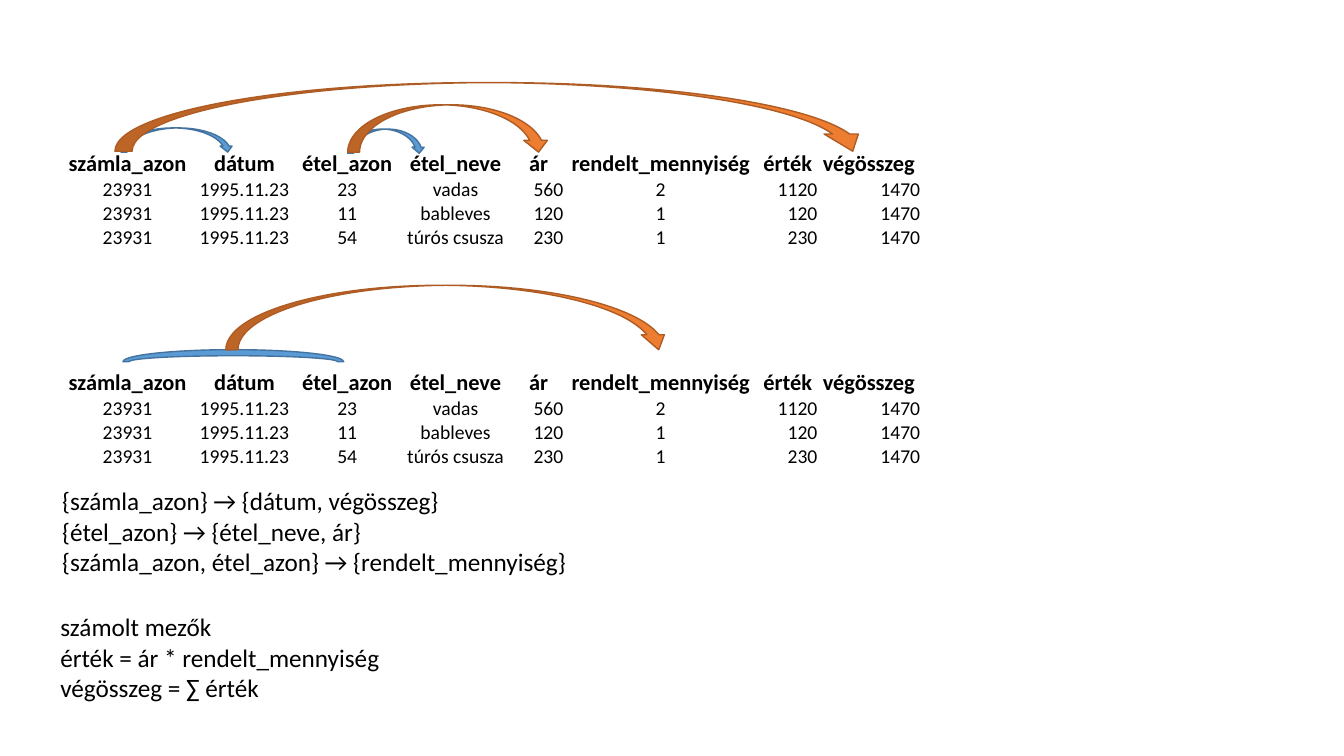
from dataclasses import dataclass

from lxml import etree
from pptx import Presentation
from pptx.dml.color import RGBColor
from pptx.enum.shapes import MSO_SHAPE
from pptx.enum.text import MSO_ANCHOR, MSO_AUTO_SIZE, PP_ALIGN
from pptx.oxml.ns import qn
from pptx.slide import Slide
from pptx.table import _Cell
from pptx.util import Pt

CURVED_ARROW = MSO_SHAPE.CURVED_DOWN_ARROW
BLOCK_ARC = MSO_SHAPE.BLOCK_ARC
BOTTOM = MSO_ANCHOR.BOTTOM
CENTER, RIGHT = PP_ALIGN.CENTER, PP_ALIGN.RIGHT
GROW = MSO_AUTO_SIZE.SHAPE_TO_FIT_TEXT


@dataclass(frozen=True)
class Theme:
    font: str = "Calibri"
    text: str = "000000"
    paper: str = "FFFFFF"
    blue: str = "5B9BD5"
    blue_line: str = "43739E"
    orange: str = "ED7D31"
    orange_line: str = "AF5C24"
    header_size: int = 16
    cell_size: int = 14
    note_size: int = 18


THEME = Theme()


@dataclass(frozen=True)
class Arc:
    left: float
    top: float
    width: float
    height: float
    fill: str
    line: str
    kind: MSO_SHAPE = CURVED_ARROW
    adjustments: tuple[float, ...] = ()


@dataclass(frozen=True)
class Note:
    left: float
    top: float
    width: float
    height: float
    lines: tuple[str, ...]


# Invoice block, shown twice in one table
HEADERS = ("számla_azon", "dátum", "étel_azon", "étel_neve", "ár",
           "rendelt_mennyiség", "érték", "végösszeg")
ITEMS = (
    ("23931", "1995.11.23", "23", "vadas", "560", "2", "1120", "1470"),
    ("23931", "1995.11.23", "11", "bableves", "120", "1", "120", "1470"),
    ("23931", "1995.11.23", "54", "túrós csusza", "230", "1", "230", "1470"),
)
RIGHT_ALIGNED = {"ár", "érték", "végösszeg"}
COLUMN_WIDTHS = (91.4, 75.6, 71.3, 83.5, 35.3, 139, 42.5, 73.4)
TABLE_LEFT, TABLE_TOP = 45.4, 56.2
ROW_COUNT, ROW_HEIGHT = 16, 17.1
HEADER_ROWS = (3, 12)

# Dependency arrows, from back to front
ARCS = (
    Arc(86.4, 91.4, 80.6, 17.3, THEME.blue, THEME.blue_line),
    Arc(82.1, 59, 539.3, 49, THEME.orange, THEME.orange_line),
    Arc(248.4, 92.2, 55.4, 17.3, THEME.blue, THEME.blue_line),
    Arc(248.4, 74.9, 144.7, 33.8, THEME.orange, THEME.orange_line),
    Arc(87.8, 249.8, 157.7, 17.3, THEME.blue, THEME.blue_line, BLOCK_ARC),
    Arc(161.3, 203.8, 317.5, 46.1, THEME.orange, THEME.orange_line,
        adjustments=(0.188, 0.358, 0.234)),
)

NOTES = (
    Note(37.4, 343.4, 480.2, 72.7, (
        "{számla_azon} → {dátum, végösszeg}",
        "{étel_azon} → {étel_neve, ár}",
        "{számla_azon, étel_azon} → {rendelt_mennyiség}",
    )),
    Note(36, 433.4, 295.2, 72.7, (
        "számolt mezők",
        "érték = ár * rendelt_mennyiség",
        "végösszeg = ∑ érték",
    )),
)


def color(value: str) -> RGBColor:
    return RGBColor.from_string(value)


def format_runs(paragraph, size: int, bold: bool = False) -> None:
    for run in paragraph.runs:
        run.font.name = THEME.font
        run.font.size = Pt(size)
        run.font.bold = bold
        run.font.color.rgb = color(THEME.text)


def add_borders(cell: _Cell) -> None:
    properties = cell._tc.get_or_add_tcPr()
    for position, side in enumerate(("lnL", "lnR", "lnT", "lnB")):
        border = etree.Element(qn(f"a:{side}"), w=str(Pt(1)))
        fill = etree.SubElement(border, qn("a:solidFill"))
        etree.SubElement(fill, qn("a:srgbClr"), val=THEME.paper)
        properties.insert(position, border)


def fill_cell(cell: _Cell, text: str, alignment: PP_ALIGN, is_header: bool) -> None:
    cell.margin_left = cell.margin_right = cell.margin_top = cell.margin_bottom = 0
    cell.vertical_anchor = BOTTOM
    cell.fill.solid()
    cell.fill.fore_color.rgb = color(THEME.paper)
    add_borders(cell)
    paragraph = cell.text_frame.paragraphs[0]
    if text:
        paragraph.text = text
        paragraph.alignment = alignment
        size = THEME.header_size if is_header else THEME.cell_size
        format_runs(paragraph, size, is_header)
    else:
        # Keeps an empty row as low as a data row
        etree.SubElement(paragraph._p, qn("a:endParaRPr"), sz=str(THEME.cell_size * 100))


def add_invoice_table(slide: Slide) -> None:
    table = slide.shapes.add_table(
        ROW_COUNT, len(HEADERS), Pt(TABLE_LEFT), Pt(TABLE_TOP),
        Pt(sum(COLUMN_WIDTHS)), Pt(ROW_COUNT * ROW_HEIGHT)).table
    table.first_row = table.horz_banding = False
    for column, width in zip(table.columns, COLUMN_WIDTHS):
        column.width = Pt(width)

    contents = {start + offset: values for start in HEADER_ROWS
                for offset, values in enumerate((HEADERS, *ITEMS))}
    blank = ("",) * len(HEADERS)
    for row_index, row in enumerate(table.rows):
        row.height = Pt(ROW_HEIGHT)
        is_header = row_index in HEADER_ROWS
        values = contents.get(row_index, blank)
        for cell, header, text in zip(row.cells, HEADERS, values):
            to_right = header in RIGHT_ALIGNED and not is_header
            fill_cell(cell, text, RIGHT if to_right else CENTER, is_header)


def add_arc(slide: Slide, arc: Arc) -> None:
    shape = slide.shapes.add_shape(
        arc.kind, Pt(arc.left), Pt(arc.top), Pt(arc.width), Pt(arc.height))
    shape.shadow.inherit = False
    shape.fill.solid()
    shape.fill.fore_color.rgb = color(arc.fill)
    shape.line.color.rgb = color(arc.line)
    shape.line.width = Pt(1)
    for index, value in enumerate(arc.adjustments):
        shape.adjustments[index] = value


def add_note(slide: Slide, note: Note) -> None:
    text_frame = slide.shapes.add_textbox(
        Pt(note.left), Pt(note.top), Pt(note.width), Pt(note.height)).text_frame
    text_frame.word_wrap = True
    text_frame.auto_size = GROW
    text_frame.text = "\n".join(note.lines)
    for paragraph in text_frame.paragraphs:
        format_runs(paragraph, THEME.note_size)


def main() -> None:
    presentation = Presentation()
    presentation.slide_width, presentation.slide_height = Pt(960), Pt(540)
    slide = presentation.slides.add_slide(presentation.slide_layouts[6])
    add_invoice_table(slide)
    for arc in ARCS:
        add_arc(slide, arc)
    for note in NOTES:
        add_note(slide, note)
    presentation.save("out.pptx")


if __name__ == "__main__":
    main()
